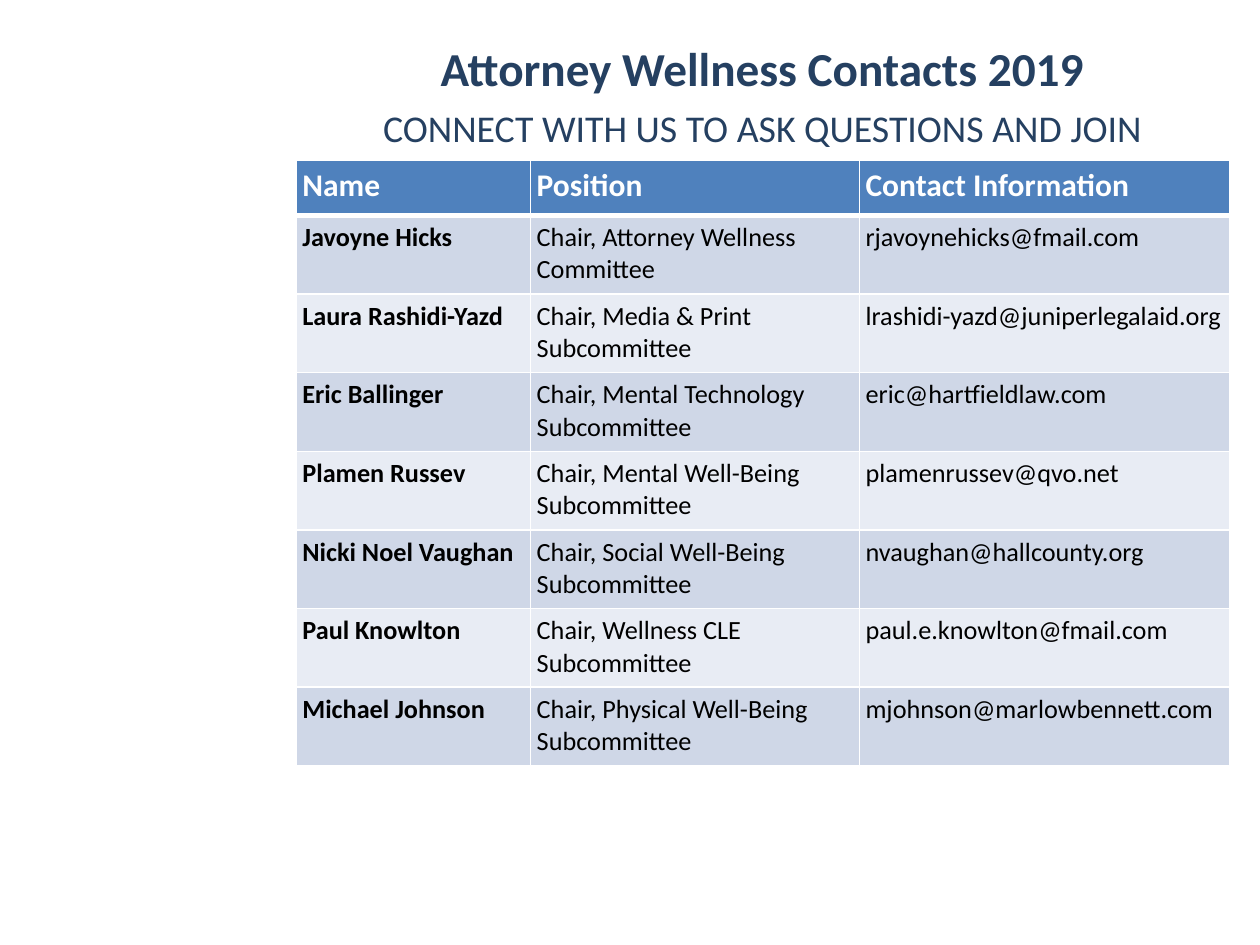
"""Build the attorney wellness contacts slide: a two-line heading above a contact table."""
from lxml import etree
from pptx import Presentation
from pptx.dml.color import RGBColor
from pptx.enum.text import MSO_ANCHOR, MSO_AUTO_SIZE, PP_ALIGN
from pptx.oxml.ns import qn
from pptx.util import Inches, Pt

LEFT, CENTER = PP_ALIGN.LEFT, PP_ALIGN.CENTER
TOP = MSO_ANCHOR.TOP
GROW = MSO_AUTO_SIZE.SHAPE_TO_FIT_TEXT

NAVY = RGBColor(0x25, 0x40, 0x61)
BLUE = RGBColor(0x4F, 0x81, 0xBD)
DARK_BAND = RGBColor(0xCF, 0xD7, 0xE7)
LIGHT_BAND = RGBColor(0xE8, 0xEC, 0xF4)
WHITE = RGBColor(0xFF, 0xFF, 0xFF)
BLACK = RGBColor(0, 0, 0)

TITLE = "Attorney Wellness Contacts 2019"
SUBTITLE = "connect with us to ask questions and join"
HEADER = ("Name", "Position", "Contact Information")
CONTACTS = [
    ("Javoyne Hicks", "Chair, Attorney Wellness Committee", "rjavoynehicks@fmail.com"),
    ("Laura Rashidi-Yazd", "Chair, Media & Print Subcommittee", "lrashidi-yazd@juniperlegalaid.org"),
    ("Eric Ballinger", "Chair, Mental Technology Subcommittee", "eric@hartfieldlaw.com"),
    ("Plamen Russev", "Chair, Mental Well-Being Subcommittee", "plamenrussev@qvo.net"),
    ("Nicki Noel Vaughan", "Chair, Social Well-Being Subcommittee", "nvaughan@hallcounty.org"),
    ("Paul Knowlton", "Chair, Wellness CLE Subcommittee", "paul.e.knowlton@fmail.com"),
    ("Michael Johnson", "Chair, Physical Well-Being Subcommittee", "mjohnson@marlowbennett.com"),
]

CONTENT_LEFT = 2.35
HEADING_TOP, HEADING_WIDTH, HEADING_HEIGHT = 0.26, 7.4, 0.96
TABLE_TOP = 1.27
COLUMN_WIDTHS = (1.86, 2.61, 2.94)
HEADER_HEIGHT, BODY_HEIGHT = 0.44, 4.37
INSET = Inches(0.05)
RULE, HEADER_RULE = 1, 3


def write(paragraph, text, size=15, color=BLACK, bold=False, align=LEFT, small_caps=False):
    paragraph.alignment = align
    run = paragraph.add_run()
    run.text = text
    font = run.font
    font.name, font.size, font.bold = "Calibri", Pt(size), bold
    font.color.rgb = color
    if small_caps:
        font._element.set("cap", "small")


def set_insets(holder):
    holder.margin_left = holder.margin_right = INSET
    holder.margin_top = holder.margin_bottom = INSET


def rule_cell(cell, top, bottom):
    properties = cell._tc.get_or_add_tcPr()
    for side, width in (("L", RULE), ("R", RULE), ("T", top), ("B", bottom)):
        line = etree.SubElement(properties, qn(f"a:ln{side}"), w=str(Pt(width)))
        fill = etree.SubElement(line, qn("a:solidFill"))
        etree.SubElement(fill, qn("a:srgbClr"), val=str(WHITE))


def add_heading(slide):
    box = slide.shapes.add_textbox(Inches(CONTENT_LEFT), Inches(HEADING_TOP),
                                   Inches(HEADING_WIDTH), Inches(HEADING_HEIGHT))
    frame = box.text_frame
    frame.word_wrap = True
    frame.auto_size = GROW
    frame.vertical_anchor = TOP
    set_insets(frame)
    heading_format = {"size": 27, "color": NAVY, "align": CENTER}
    write(frame.paragraphs[0], TITLE, bold=True, **heading_format)
    write(frame.add_paragraph(), SUBTITLE, small_caps=True, **heading_format)


def add_contacts(slide):
    rows = [HEADER, *CONTACTS]
    table = slide.shapes.add_table(
        len(rows), len(HEADER), Inches(CONTENT_LEFT), Inches(TABLE_TOP),
        Inches(sum(COLUMN_WIDTHS)), Inches(HEADER_HEIGHT + BODY_HEIGHT)).table
    for column, width in zip(table.columns, COLUMN_WIDTHS):
        column.width = Inches(width)
    for r, entries in enumerate(rows):
        is_header = r == 0
        table.rows[r].height = Inches(HEADER_HEIGHT if is_header else BODY_HEIGHT / len(CONTACTS))
        band = BLUE if is_header else (LIGHT_BAND, DARK_BAND)[r % 2]
        for c, entry in enumerate(entries):
            cell = table.cell(r, c)
            set_insets(cell)
            rule_cell(cell, top=HEADER_RULE if r == 1 else RULE,
                      bottom=HEADER_RULE if is_header else RULE)
            cell.fill.solid()
            cell.fill.fore_color.rgb = band
            write(cell.text_frame.paragraphs[0], entry, size=18 if is_header else 15,
                  color=WHITE if is_header else BLACK, bold=is_header or c == 0)


def main():
    presentation = Presentation()
    presentation.slide_width, presentation.slide_height = Inches(10), Inches(7.5)
    slide = presentation.slides.add_slide(presentation.slide_layouts[6])
    add_heading(slide)
    add_contacts(slide)
    presentation.save("out.pptx")


if __name__ == "__main__":
    main()
